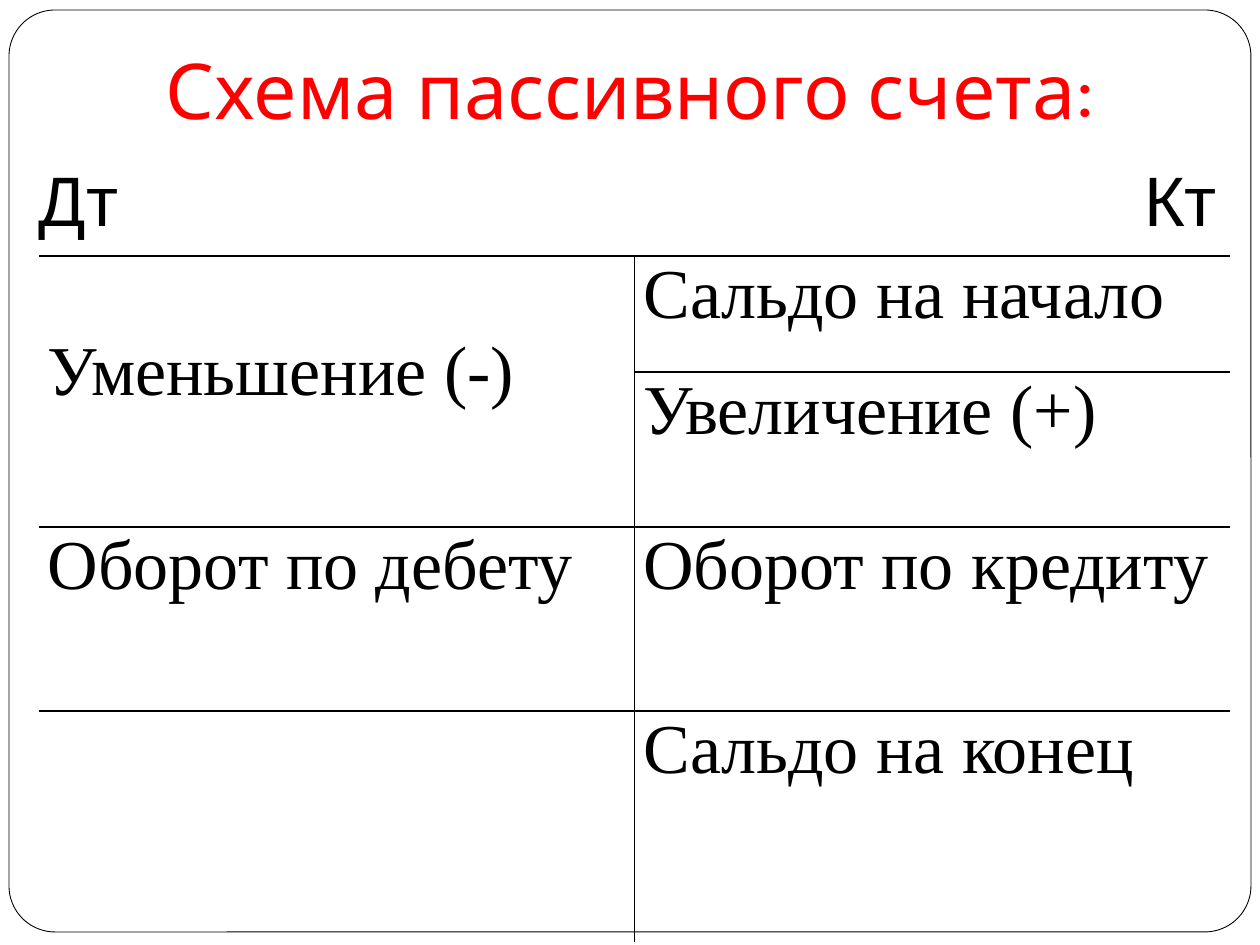
from lxml.etree import SubElement
from pptx import Presentation
from pptx.dml.color import RGBColor
from pptx.enum.shapes import MSO_SHAPE as Shape
from pptx.enum.text import MSO_ANCHOR as Anchor, PP_ALIGN as Align
from pptx.oxml.ns import qn
from pptx.util import Emu, Pt

SERIF = "Times New Roman"
ROW_HEIGHTS = (116, 155, 184, 231)
CELL_TEXTS = (
    ("Уменьшение (-)", "Сальдо на начало"),
    ("", "Увеличение (+)"),
    ("Оборот по дебету", "Оборот по кредиту"),
    ("", "Сальдо на конец"),
)


def px(length):
    """Turn pixels, 126 to the inch, into EMU."""
    return Emu(round(length * 914400 / 126))


def color(value):
    """Return the colour of a hex string."""
    return RGBColor.from_string(value)


def set_font(para, name, size, value):
    """Set the font of a paragraph."""
    para.font.name = name
    para.font.size = Pt(size)
    para.font.color.rgb = color(value)


def set_margins(frame, left, top, right, bottom):
    """Set the insets of a text frame or a table cell."""
    frame.margin_left, frame.margin_top = px(left), px(top)
    frame.margin_right, frame.margin_bottom = px(right), px(bottom)


def set_borders(cell, shown):
    """Draw the named sides of a cell in black and hide the others."""
    properties = cell._tc.get_or_add_tcPr()
    for side in "LRTB":
        line = SubElement(properties, qn(f"a:ln{side}"), w=str(Pt(1)))
        if side in shown:
            fill = SubElement(line, qn("a:solidFill"))
            SubElement(fill, qn("a:srgbClr"), val="000000")
        else:
            SubElement(line, qn("a:noFill"))


def add_frame(page, left, top, width, height):
    """Place the rounded frame behind everything else."""
    frame = page.shapes.add_shape(
        Shape.ROUNDED_RECTANGLE, px(left), px(top), px(width), px(height))
    frame.adjustments[0] = 0.05
    frame.shadow.inherit = False
    frame.fill.solid()
    frame.fill.fore_color.rgb = color("FFFFFF")
    frame.line.color.rgb = color("000000")
    frame.line.width = Pt(0.5)
    page.shapes._spTree.insert(2, frame._element)


def add_title(page, left, top, width, height):
    """Fill the title placeholder."""
    title = page.shapes.title
    title.left, title.top = px(left), px(top)
    title.width, title.height = px(width), px(height)
    frame = title.text_frame
    frame.text = "Схема пассивного счета:"
    frame.vertical_anchor = Anchor.BOTTOM
    set_margins(frame, 13, 6, 13, 13)
    para = frame.paragraphs[0]
    para.alignment = Align.CENTER
    set_font(para, "Karla", 44, "FF0000")


def add_sides(page, left, top, width, height):
    """Write the debit and credit labels at both ends of one line."""
    box = page.shapes.add_textbox(px(left), px(top), px(width), px(height))
    frame = box.text_frame
    frame.word_wrap = True
    frame.vertical_anchor = Anchor.MIDDLE
    set_margins(frame, 0, 6, 0, 6)
    para = frame.paragraphs[0]
    para.text = "Дт\tКт"
    para.alignment = Align.LEFT
    tabs = SubElement(para._p.get_or_add_pPr(), qn("a:tabLst"))
    SubElement(tabs, qn("a:tab"), pos=str(px(width - 13)), algn="r")
    set_font(para, "Arial", 40, "000000")


def add_account(page, left, top, width):
    """Build the T-account table."""
    table = page.shapes.add_table(
        len(ROW_HEIGHTS), 2, px(left), px(top), px(width), px(sum(ROW_HEIGHTS))).table
    table.first_row = table.horz_banding = False
    for row, height in zip(table.rows, ROW_HEIGHTS):
        row.height = px(height)
    last = len(ROW_HEIGHTS) - 1
    for row, texts in enumerate(CELL_TEXTS):
        for column, text in enumerate(texts):
            cell = table.cell(row, column)
            set_borders(cell, "RL"[column] + "T" + ("B" if row < last else ""))
            cell.fill.background()
            set_margins(cell, 9, 0, 9, 0)
            para = cell.text_frame.paragraphs[0]
            para.text = text
            para.alignment = Align.JUSTIFY
            set_font(para, SERIF, 40, "000000")
    decrease = table.cell(0, 0)
    decrease.merge(table.cell(1, 0))
    decrease.margin_top = px(77)


def main():
    """Build and save the slide."""
    deck = Presentation()
    deck.slide_width, deck.slide_height = px(1260), px(945)
    page = deck.slides.add_slide(deck.slide_layouts[5])
    add_frame(page, 9, 10, 1242, 922)
    add_title(page, 0, 38, 1260, 110)
    add_account(page, 39, 256, 1191)
    add_sides(page, 39, 150, 1191, 97)
    deck.save("out.pptx")


if __name__ == "__main__":
    main()
